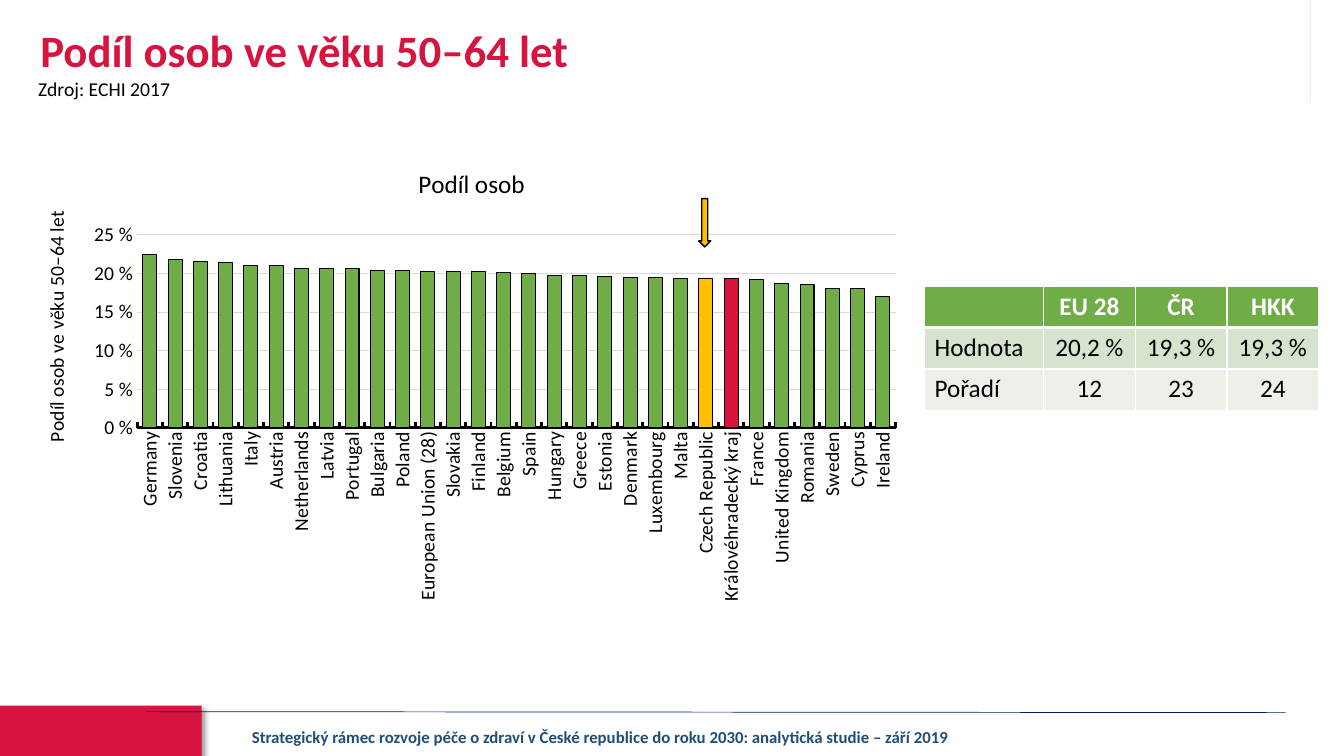
from lxml import etree
from pptx import Presentation
from pptx.chart.data import CategoryChartData
from pptx.dml.color import RGBColor
from pptx.enum.chart import XL_CHART_TYPE, XL_TICK_MARK
from pptx.enum.shapes import MSO_CONNECTOR, MSO_SHAPE
from pptx.enum.text import MSO_ANCHOR, MSO_AUTO_SIZE, PP_ALIGN
from pptx.oxml import parse_xml
from pptx.oxml.ns import nsdecls, qn
from pptx.util import Inches, Pt

COLUMN = XL_CHART_TYPE.COLUMN_CLUSTERED
TICK_IN, TICK_NONE = XL_TICK_MARK.INSIDE, XL_TICK_MARK.NONE
LEFT, CENTER = PP_ALIGN.LEFT, PP_ALIGN.CENTER
MIDDLE, NO_FIT = MSO_ANCHOR.MIDDLE, MSO_AUTO_SIZE.NONE

# Content
FONT = "Calibri"
COLORS = {"red": "D71440", "blue": "2E5980", "navy": "002060", "footer": "1F4E79",
          "black": "000000", "white": "FFFFFF", "green": "70AD47", "amber": "FFC000",
          "grid": "D9D9D9", "band1": "D5E3CF", "band2": "EBF1E9"}
TITLE = "Podíl osob ve věku 50–64 let"
SOURCE = "Zdroj: ECHI 2017"
FOOTER = ("Strategický rámec rozvoje péče o zdraví v České republice do roku 2030: "
          "analytická studie – září 2019")
CHART_TITLE = "Podíl osob"
SHARES = [
    ("Germany", 0.224), ("Slovenia", 0.218), ("Croatia", 0.216), ("Lithuania", 0.214),
    ("Italy", 0.21), ("Austria", 0.21), ("Netherlands", 0.207), ("Latvia", 0.207),
    ("Portugal", 0.206), ("Bulgaria", 0.204), ("Poland", 0.204),
    ("European Union (28)", 0.202), ("Slovakia", 0.202), ("Finland", 0.202),
    ("Belgium", 0.201), ("Spain", 0.2), ("Hungary", 0.198), ("Greece", 0.197),
    ("Estonia", 0.196), ("Denmark", 0.195), ("Luxembourg", 0.195), ("Malta", 0.193),
    ("Czech Republic", 0.193), ("Královéhradecký kraj", 0.193), ("France", 0.192),
    ("United Kingdom", 0.187), ("Romania", 0.186), ("Sweden", 0.181),
    ("Cyprus", 0.18), ("Ireland", 0.17)]
HIGHLIGHTS = {"Czech Republic": "amber", "Královéhradecký kraj": "red"}
RANKING = [("", "EU 28", "ČR", "HKK"),
           ("Hodnota", "20,2 %", "19,3 %", "19,3 %"),
           ("Pořadí", "12", "23", "24")]
ROW_FILLS = ["green", "band1", "band2"]
# Corner swooshes: four Bezier points, then the slide corner
CORNERS = [("red", [(2.13, 7.51), (-0.34, 7.44), (0.08, 7.59), (0, 6.3)], (-0.01, 7.51)),
           ("blue", [(11.11, -0.01), (13.7, 0.07), (13.26, -0.1), (13.35, 1.42)],
            (13.35, -0.01))]


def rgb(name):
    return RGBColor.from_string(COLORS[name])


def style(font, size, color="black", bold=False):
    font.name, font.size, font.bold = FONT, Pt(size), bold
    font.color.rgb = rgb(color)


def write(tf, text, size, color="black", bold=False, align=LEFT):
    p = tf.paragraphs[0]
    p.alignment = align
    r = p.add_run()
    r.text = text
    style(r.font, size, color, bold)
    return p


def outline(line, color, width):
    line.color.rgb = rgb(color)
    line.width = Pt(width)


def add_text(box, text, size, wrap=True, **look):
    tf = s.shapes.add_textbox(*map(Inches, box)).text_frame
    tf.word_wrap = wrap
    write(tf, text, size, **look)


def bezier(points, t):
    weights = ((1 - t) ** 3, 3 * t * (1 - t) ** 2, 3 * t * t * (1 - t), t ** 3)
    return tuple(sum(w * pt[axis] for w, pt in zip(weights, points)) for axis in (0, 1))


def place(element, x, y, w=None, h=None):
    """Give a chart title or plot area a manual layout, in fractions of the chart."""
    parts = [("xMode", "edge"), ("yMode", "edge"), ("x", x), ("y", y)]
    if w:
        parts = [("layoutTarget", "inner")] + parts + [("w", w), ("h", h)]
    for old in element.findall(qn("c:layout")):
        element.remove(old)
    layout = etree.Element(qn("c:layout"))
    manual = etree.SubElement(layout, qn("c:manualLayout"))
    for tag, val in parts:
        etree.SubElement(manual, qn(f"c:{tag}")).set("val", str(val))
    text = element.find(qn("c:tx"))
    element.insert(0 if text is None else 1, layout)


prs = Presentation()
prs.slide_width, prs.slide_height = Inches(13.33), Inches(7.5)
s = prs.slides.add_slide(prs.slide_layouts[5])

# Corners
for color, curve, corner in CORNERS:
    points = [bezier(curve, i / 40) for i in range(41)] + [corner]
    builder = s.shapes.build_freeform(*points[0], scale=Inches(1))
    builder.add_line_segments(points[1:], close=True)
    sp = builder.convert_to_shape()
    sp.fill.solid()
    sp.fill.fore_color.rgb = rgb(color)
    sp.line.fill.background()
    sp.shadow.inherit = False
    sp.element.spPr.find(qn("a:effectLst")).append(parse_xml(
        f'<a:outerShdw {nsdecls("a")} blurRad="{Pt(4)}" dist="{Pt(3)}" dir="2700000">'
        f'<a:srgbClr val="{COLORS["black"]}"><a:alpha val="40000"/></a:srgbClr>'
        '</a:outerShdw>'))

# Footer
rule = s.shapes.add_connector(MSO_CONNECTOR.STRAIGHT, *map(Inches, (1.45, 7.06, 12.75, 7.07)))
outline(rule.line, "navy", 0.5)
etree.SubElement(rule.element.spPr, qn("a:effectLst"))
add_text((1.91, 7.16, 8.09, 0.3), FOOTER, 12, color="footer", bold=True, align=CENTER)

# Title and source
title = s.shapes.title
title.left, title.top, title.width, title.height = map(Inches, (0.3, 0.18, 11.5, 0.69))
title.text_frame.auto_size = NO_FIT
title.text_frame.vertical_anchor = MIDDLE
write(title.text_frame, TITLE, 32, "red", True).line_spacing = 0.9
add_text((0.28, 0.71, 1.52, 0.34), SOURCE, 14, wrap=False)

# Chart
data = CategoryChartData()
data.categories = [country for country, _ in SHARES]
data.add_series("Series 1", [share for _, share in SHARES])
chart = s.shapes.add_chart(COLUMN, *map(Inches, (0.21, 1.51, 8.85, 4.56)), data).chart
style(chart.font, 10)
chart.has_legend = False
write(chart.chart_title.text_frame, CHART_TITLE, 18)
chart.chart_title.include_in_layout = False

plot = chart.plots[0]
plot.vary_by_categories = False
plot.gap_width, plot.overlap = 81, -27
series = plot.series[0]
bars = [(series, "green")] + [(series.points[i], HIGHLIGHTS[country])
                              for i, (country, _) in enumerate(SHARES) if country in HIGHLIGHTS]
for bar, color in bars:
    bar.format.fill.solid()
    bar.format.fill.fore_color.rgb = rgb(color)
    outline(bar.format.line, "black", 0.75)
series.invert_if_negative = False

cat, val = chart.category_axis, chart.value_axis
for axis, tick in ((cat, TICK_IN), (val, TICK_NONE)):
    style(axis.tick_labels.font, 14)
    axis.major_tick_mark, axis.minor_tick_mark = tick, TICK_NONE
outline(cat.format.line, "black", 2)
cat.tick_labels.font._element.getparent().getparent().getparent().find(
    qn("a:bodyPr")).set("rot", "-5400000")
val.minimum_scale, val.maximum_scale, val.major_unit = 0, 0.25, 0.05
val.format.line.fill.background()
outline(val.major_gridlines.format.line, "grid", 0.75)
val.tick_labels.number_format = '0" "%'
val.tick_labels.number_format_is_linked = False
write(val.axis_title.text_frame, TITLE, 14)

plot_area = chart.element.find(qn("c:chart")).find(qn("c:plotArea"))
place(plot_area, 0.13, 0.18, 0.85, 0.42)
place(chart.chart_title.element if hasattr(chart.chart_title, "element")
      else chart.element.find(qn("c:chart")).find(qn("c:title")), 0.44, 0.02)
place(plot_area.find(qn("c:valAx")).find(qn("c:title")), 0.02, 0.12)

# Arrow over the Czech Republic
arrow = s.shapes.add_shape(MSO_SHAPE.DOWN_ARROW, *map(Inches, (6.93, 1.97, 0.12, 0.48)))
arrow.shadow.inherit = False
arrow.fill.solid()
arrow.fill.fore_color.rgb = rgb("amber")
outline(arrow.line, "black", 1)

# Ranking table
table = s.shapes.add_table(3, 4, *map(Inches, (9.17, 2.84, 3.91, 1.23))).table
for i, col in enumerate(table.columns):
    col.width = Inches(0.91 if i else 1.18)
for i, (row, texts) in enumerate(zip(table.rows, RANKING)):
    row.height = Inches(0.41)
    for j, text in enumerate(texts):
        cell = table.cell(i, j)
        cell.fill.solid()
        cell.fill.fore_color.rgb = rgb(ROW_FILLS[i])
        if text:
            write(cell.text_frame, text, 18, "black" if i else "white", i == 0,
                  CENTER if j else LEFT)
        for k, side in enumerate("LRTB"):
            thick = (i, side) in ((0, "B"), (1, "T"))
            cell._tc.get_or_add_tcPr().insert(k, parse_xml(
                f'<a:ln{side} {nsdecls("a")} w="{Pt(3 if thick else 1)}"><a:solidFill>'
                f'<a:srgbClr val="{COLORS["white"]}"/></a:solidFill></a:ln{side}>'))

prs.save("out.pptx")
